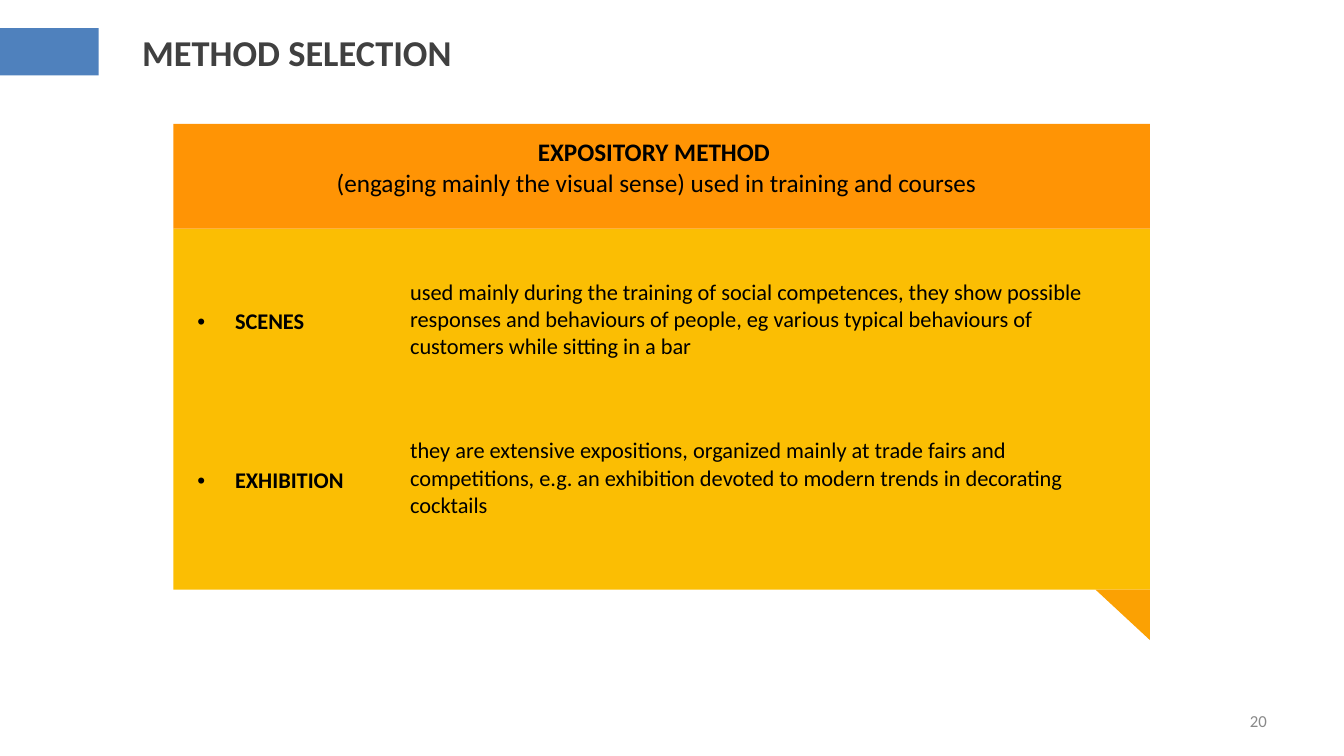
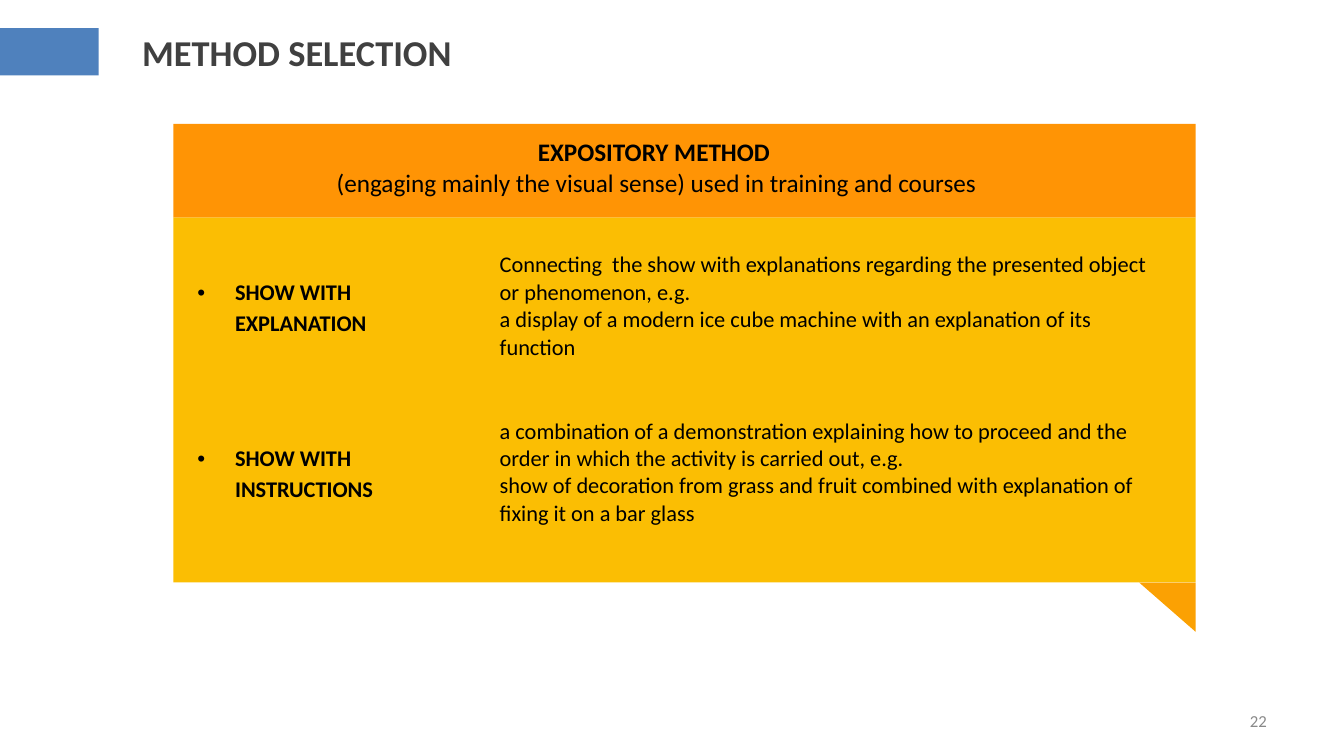
from dataclasses import dataclass

from lxml import etree
from pptx import Presentation
from pptx.dml import color
from pptx.enum import shapes, text
from pptx.oxml import ns
from pptx.util import Cm, Pt


@dataclass(frozen=True)
class Theme:
    font: str = "Calibri"
    accent: str = "4F81BD"
    header: str = "FF9405"
    body: str = "FBBE03"
    fold: str = "FBA103"
    title: str = "404040"
    ink: str = "000000"
    muted: str = "898989"
    title_size: int = 26
    heading_size: int = 18
    text_size: int = 16
    number_size: int = 12


THEME = Theme()
NO_GRID = "{2D5ABB26-0587-4C30-8999-92F81FD0307C}"
TITLE = "METHOD SELECTION"
HEADING = [
    ("EXPOSITORY METHOD ", True),
    ("(engaging mainly the visual sense) used in training and courses", False),
]

# Lengths in centimetres
SLIDES = [
    {
        "number": "20",
        "card": (4.37, 3.12, 24.61, 11.74),
        "header": 2.64,
        "fold": (1.37, 1.27),
        "table_top": 3.2,
        "columns": (5.36, 18.16),
        "rows": (3.48, 4.52),
        "methods": [
            ("SCENES", ["used mainly during the training of social competences, they show "
                        "possible responses and behaviours of people, eg various typical "
                        "behaviours of customers while sitting in a bar"]),
            ("EXHIBITION", ["they are extensive expositions, organized mainly at trade fairs "
                            "and competitions, e.g. an exhibition devoted to modern trends "
                            "in decorating cocktails"]),
        ],
    },
    {
        "number": "22",
        "card": (4.37, 3.12, 25.76, 11.56),
        "header": 2.36,
        "fold": (1.42, 1.24),
        "table_top": 2.77,
        "columns": (7.62, 17.37),
        "rows": (3.66, 4.72),
        "methods": [
            ("SHOW WITH EXPLANATION", [
                "Connecting  the show with explanations regarding the presented object "
                "or phenomenon, e.g.",
                "a display of a modern ice cube machine with an explanation of its function"]),
            ("SHOW WITH INSTRUCTIONS", [
                "a combination of a demonstration explaining how to proceed and the order "
                "in which the activity is carried out, e.g.",
                "show of decoration from grass and fruit combined with explanation of "
                "fixing it on a bar glass"]),
        ],
    },
]


def apply(target, values):
    for name, value in values.items():
        setattr(target, name, value)


def write(frame, lines, size, ink=THEME.ink, **layout):
    """Fill a text frame with (wording, bold) paragraphs."""
    for index, (wording, bold) in enumerate(lines):
        para = frame.add_paragraph() if index else frame.paragraphs[0]
        apply(para, layout)
        span = para.add_run()
        span.text = wording
        apply(span.font, {"name": THEME.font, "size": Pt(size), "bold": bold})
        span.font.color.rgb = color.RGBColor.from_string(ink)


def add_text(page, box, lines, size, ink=THEME.ink,
             anchor=text.MSO_ANCHOR.MIDDLE, **layout):
    frame = page.shapes.add_textbox(*map(Cm, box)).text_frame
    apply(frame, {"word_wrap": True, "vertical_anchor": anchor})
    write(frame, lines, size, ink, **layout)


def add_block(page, box, fill, preset=shapes.MSO_SHAPE.RECTANGLE, rotation=0):
    block = page.shapes.add_shape(preset, *map(Cm, box))
    apply(block, {"rotation": rotation})
    block.shadow.inherit = False
    block.fill.solid()
    block.fill.fore_color.rgb = color.RGBColor.from_string(fill)
    block.line.fill.background()


def add_bullet(para):
    props = para._p.get_or_add_pPr()
    props.set("marL", str(Cm(0.95)))
    props.set("indent", str(-Cm(0.95)))
    etree.SubElement(props, ns.qn("a:buFont")).set("typeface", "Arial")
    etree.SubElement(props, ns.qn("a:buChar")).set("char", "•")


def add_frame(page, number):
    """Accent bar, title and slide number."""
    add_block(page, (0, 0.71, 2.49, 1.19), THEME.accent)
    add_text(page, (3.33, 0.53, 23.6, 1.57), [(TITLE, True)],
             THEME.title_size, THEME.title)
    add_text(page, (24.28, 17.65, 7.9, 1.02), [(number, False)],
             THEME.number_size, THEME.muted, alignment=text.PP_ALIGN.RIGHT)


def add_card(page, box, header, fold):
    """Two-tone card with a folded corner below its right end."""
    left, top, width, height = box
    fold_width, fold_height = fold
    add_block(page, (left, top + header, width, height - header), THEME.body)
    add_block(page, (left, top, width, header), THEME.header)
    add_block(page, (left + width - fold_width, top + height, fold_width, fold_height),
              THEME.fold, shapes.MSO_SHAPE.RIGHT_TRIANGLE, 180)
    add_text(page, (left + 0.48, top + 0.2, 23.4, 1.8), HEADING, THEME.heading_size,
             anchor=text.MSO_ANCHOR.TOP, alignment=text.PP_ALIGN.CENTER)


def add_methods(page, left, top, columns, rows, methods):
    """Table of method names and their descriptions."""
    table = page.shapes.add_table(
        len(rows), len(columns), Cm(left), Cm(top), Cm(sum(columns)), Cm(sum(rows))).table
    apply(table, {"first_row": False, "horz_banding": False})
    table._tbl.tblPr.find(ns.qn("a:tableStyleId")).text = NO_GRID
    for column, width in zip(table.columns, columns):
        column.width = Cm(width)
    for row, height, (name, description) in zip(table.rows, rows, methods):
        row.height = Cm(height)
        label, detail = row.cells
        for cell in (label, detail):
            cell.fill.background()
            cell.vertical_anchor = text.MSO_ANCHOR.MIDDLE
        write(label.text_frame, [(name, True)], THEME.text_size,
              line_spacing=1.14, space_after=Pt(6))
        add_bullet(label.text_frame.paragraphs[0])
        write(detail.text_frame, [(line, False) for line in description], THEME.text_size)


def add_method_slide(deck, content):
    page = deck.slides.add_slide(deck.slide_layouts[6])
    left, top = content["card"][:2]
    add_frame(page, content["number"])
    add_card(page, content["card"], content["header"], content["fold"])
    add_methods(page, left + 0.35, top + content["table_top"],
                content["columns"], content["rows"], content["methods"])


def main():
    deck = Presentation()
    apply(deck, {"slide_width": Cm(33.87), "slide_height": Cm(19.05)})
    for content in SLIDES:
        add_method_slide(deck, content)
    deck.save("out.pptx")


if __name__ == "__main__":
    main()
